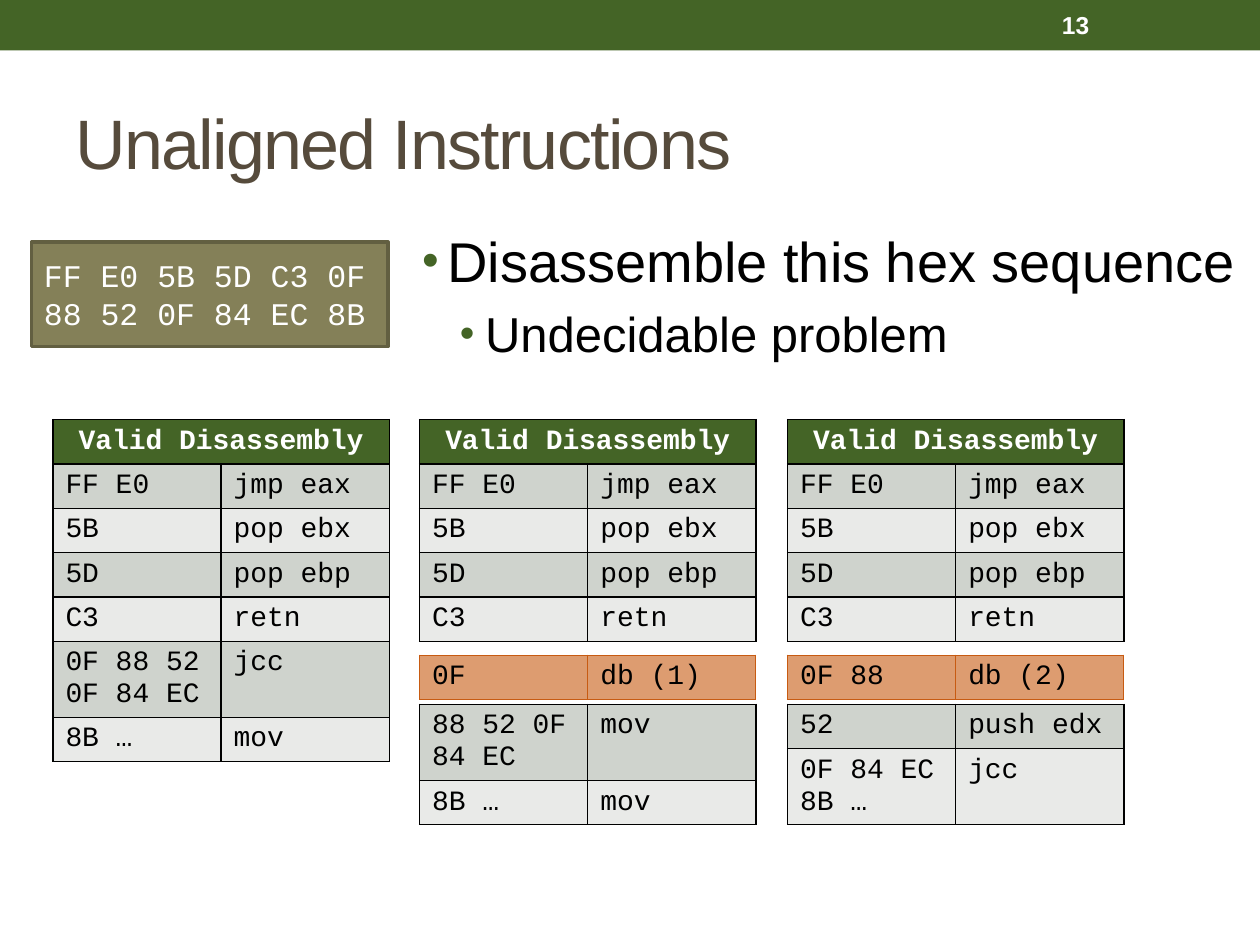
"""Build the slide on unaligned instructions and their valid disassemblies."""
from lxml import etree
from pptx import Presentation
from pptx.dml.color import RGBColor
from pptx.enum import shapes, text
from pptx.oxml import parse_xml
from pptx.oxml.ns import nsdecls, qn
from pptx.util import Inches, Pt

GREEN, BLACK, WHITE, ORANGE = "446426", "000000", "FFFFFF", "C75B12"
BANDS = ["CFD3CD", "E9EAE8"]
MONO = "Courier New"


def color(hex_value):
    return RGBColor.from_string(hex_value)


def write(frame, words, size=16, font="Arial", ink=BLACK, bold=False,
          align=text.PP_ALIGN.LEFT, anchor=text.MSO_ANCHOR.TOP):
    frame.text = words
    frame.word_wrap = True
    frame.vertical_anchor = anchor
    for paragraph in frame.paragraphs:
        paragraph.alignment = align
        for run in paragraph.runs:
            run.font.size, run.font.name, run.font.bold = Pt(size), font, bold
            run.font.color.rgb = color(ink)


prs = Presentation()
prs.slide_width, prs.slide_height = Inches(10), Inches(7.5)
slide = prs.slides.add_slide(prs.slide_layouts[1])
middle = text.MSO_ANCHOR.MIDDLE

banner = slide.shapes.add_shape(shapes.MSO_SHAPE.RECTANGLE, 0, 0, Inches(10), Inches(0.4))
banner.shadow.inherit = False
banner.fill.solid()
banner.fill.fore_color.rgb = color(GREEN)
banner.line.fill.background()

heading = slide.shapes.title
heading.left, heading.top, heading.width, heading.height = map(Inches, (0.5, 0.58, 9, 1.08))
write(heading.text_frame, "Unaligned Instructions", size=40, ink="564B3C", anchor=middle)
heading.text_frame.paragraphs[0].runs[0].font._element.set("spc", "-100")

points = slide.placeholders[1]
points.left, points.top, points.width, points.height = map(Inches, (3.25, 1.75, 6.67, 1.33))
write(points.text_frame, "Disassemble this hex sequence\nUndecidable problem", size=32)
for level, (point, indent, size) in enumerate(
        zip(points.text_frame.paragraphs, (0.2, 0.5), (32, 28))):
    point.level = level
    point.runs[0].font.size = Pt(size)
    props = point._p.get_or_add_pPr()
    props.set("marL", str(Inches(indent)))
    props.set("indent", str(-Inches(0.2)))
    bullet_color = etree.SubElement(props, qn("a:buClr"))
    etree.SubElement(bullet_color, qn("a:srgbClr"), val=GREEN)
    etree.SubElement(props, qn("a:buSzPct"), val="85000")
    etree.SubElement(props, qn("a:buFont"), typeface="Arial")
    etree.SubElement(props, qn("a:buChar"), char="•")

hex_sequence = slide.shapes.add_shape(
    shapes.MSO_SHAPE.RECTANGLE, Inches(0.25), Inches(1.92), Inches(2.83), Inches(0.83))
hex_sequence.shadow.inherit = False
hex_sequence.fill.solid()
hex_sequence.fill.fore_color.rgb = color("848058")
hex_sequence.line.color.rgb = color("625F41")
hex_sequence.line.width = Pt(2.08)
write(hex_sequence.text_frame, "FF E0 5B 5D C3 0F 88 52 0F 84 EC 8B",
      size=18, font=MONO, ink=WHITE, anchor=middle)

shared = [("Valid Disassembly", ""), ("FF E0", "jmp eax"), ("5B", "pop ebx"),
          ("5D", "pop ebp"), ("C3", "retn")]
first, second, third = 0.42, 3.33, 6.25
listings = [
    (first, 3.33, 2.83, shared + [("0F 88 52 0F 84 EC", "jcc"), ("8B …", "mov")]),
    (second, 3.33, 1.83, shared),
    (second, 5.2, 0.37, [("0F", "db (1)")]),
    (second, 5.59, 1, [("88 52 0F 84 EC", "mov"), ("8B …", "mov")]),
    (third, 3.33, 1.83, shared),
    (third, 5.2, 0.37, [("0F 88", "db (2)")]),
    (third, 5.59, 1, [("52", "push edx"), ("0F 84 EC\n8B …", "jcc")]),
]
for left, top, height, instructions in listings:
    holder = slide.shapes.add_table(len(instructions), 2, Inches(left), Inches(top),
                                    Inches(2.67), Inches(height))
    listing = holder.table
    has_header = instructions[0] == shared[0]
    is_data = instructions[0][1].startswith("db")
    listing.first_row = has_header
    border, border_width = (ORANGE, Pt(0.75)) if is_data else (BLACK, Pt(1))
    for r, instruction in enumerate(instructions):
        listing.rows[r].height = Inches(0.26)
        is_header = has_header and r == 0
        band = GREEN if is_header else BANDS[(r - has_header) % 2]
        for cell, words in zip(listing.rows[r].cells, instruction):
            cell.fill.solid()
            cell.fill.fore_color.rgb = color(ORANGE if is_data else band)
            cell_props = cell._tc.get_or_add_tcPr()
            if is_data:
                tint = cell_props.find(".//" + qn("a:srgbClr"))
                etree.SubElement(tint, qn("a:alpha"), val="60000")
            for place, side in enumerate(("lnL", "lnR", "lnT", "lnB")):
                cell_props.insert(place, parse_xml(
                    f'<a:{side} {nsdecls("a")} w="{border_width}"><a:solidFill>'
                    f'<a:srgbClr val="{border}"/></a:solidFill></a:{side}>'))
            write(cell.text_frame, words, font=MONO, bold=is_header,
                  ink=WHITE if is_header else BLACK,
                  align=text.PP_ALIGN.CENTER if is_header else text.PP_ALIGN.LEFT)
    if has_header:
        listing.cell(0, 0).merge(listing.cell(0, 1))
    holder.height = Inches(height)

page_number = slide.shapes.add_textbox(Inches(8.33), Inches(0.02), Inches(1.17), Inches(0.36))
write(page_number.text_frame, "13", size=14, ink=WHITE, bold=True, anchor=middle)

prs.save("out.pptx")
